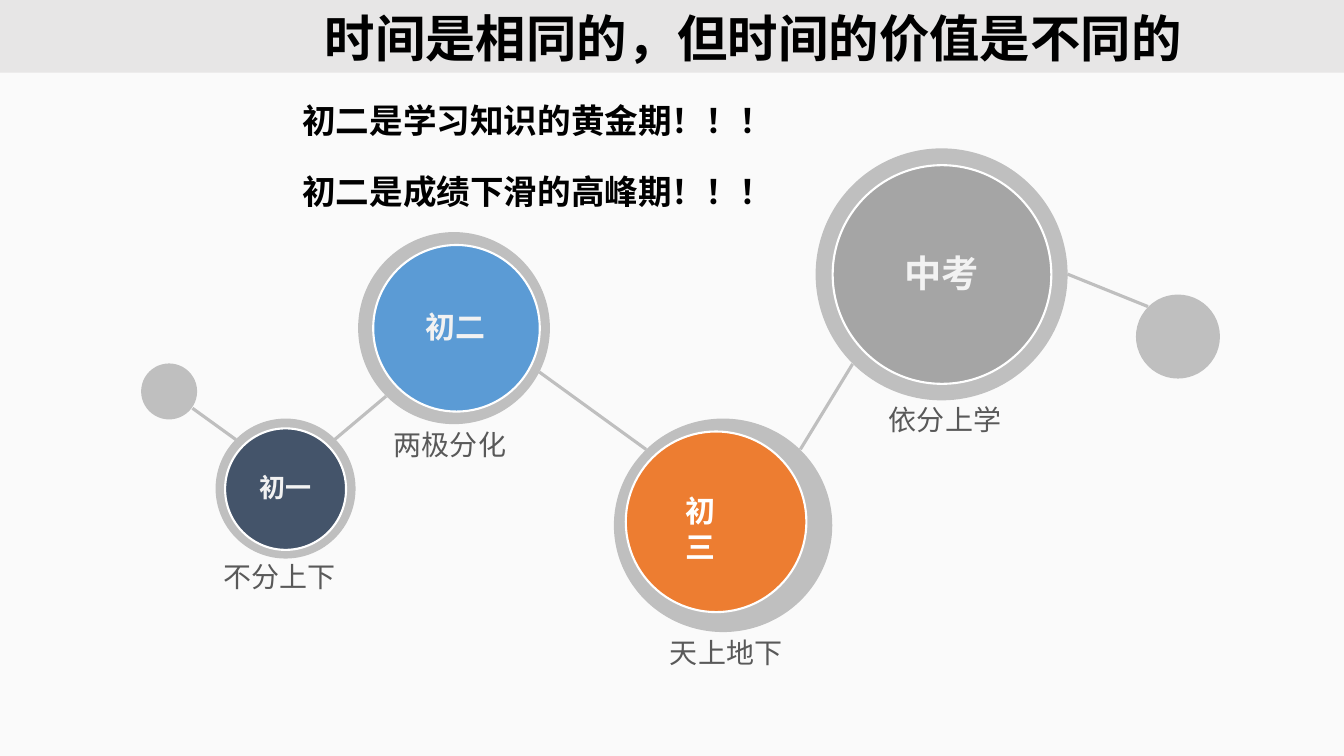
import pptx
import pptx.util
import pptx.dml.color
import pptx.enum.shapes
import pptx.enum.text
import pptx.oxml.ns
from lxml import etree

Pt = pptx.util.Pt
ANCHOR = pptx.enum.text.MSO_ANCHOR
ALIGN = pptx.enum.text.PP_ALIGN

THEME = {
    "background": "E7E6E6", "panel": "FFFFFF", "ring": "BFBFBF", "edge": "FFFFFF",
    "text": "000000", "caption": "595959",
    "title_font": "Calibri", "font": "Noto Sans CJK SC",
    "title_size": 36, "slogan_size": 24, "caption_size": 20,
}

# Content: boxes are (left, top, width, height) in points
SLIDE = (960, 540)
PANEL = (0, 52, 960, 488)
TITLE = ("时间是相同的，但时间的价值是不同的", (124, 10.8, 828, 37.5))
SLOGANS = [
    ("初二是学习知识的黄金期！！！", (206.6, 67, 352, 65)),
    ("初二是成绩下滑的高峰期！！！", (206.6, 118, 352, 65)),
]
STAGES = [
    {"name": "初一", "size": 18.6, "ink": "F2F2F2", "fill": "44546A", "wrap": False,
     "ring": (154, 299, 100, 100), "disc": (160.8, 306, 86.4, 86.8),
     "label": (178, 333.4, 52, 30), "caption": "不分上下", "caption_at": (128, 400.3)},
    {"name": "初二", "size": 21.4, "ink": "F2F2F2", "fill": "5B9BD5", "wrap": False,
     "ring": (255.8, 165.8, 137, 137.2), "disc": (266.6, 175, 119, 119),
     "label": (296.6, 216.7, 57.6, 33), "caption": "两极分化", "caption_at": (249.8, 306)},
    {"name": "初三", "size": 21.4, "ink": "FFFFFF", "fill": "ED7D31", "wrap": True,
     "ring": (438.5, 299, 156, 152.5), "disc": (447, 308.2, 129, 129),
     "label": (473, 348.5, 54.7, 30), "caption": "天上地下", "caption_at": (447, 455)},
    {"name": "中考", "size": 26.6, "ink": "F2F2F2", "fill": "A5A5A5", "wrap": False,
     "ring": (582.6, 106, 180, 180), "disc": (594.8, 118, 156.2, 156.2),
     "label": (638.6, 175, 68.4, 39.6), "caption": "依分上学", "caption_at": (603.4, 288.7)},
]
CAPTION_SIZE = (143.3, 28)
LINKS = [
    (239, 314, 275.8, 283), (385.2, 265.7, 461.5, 321), (571.7, 321, 609, 260),
    (137.5, 291.6, 168.5, 314), (762.5, 195.8, 820, 219),
]
END_DOTS = [(100.8, 259.6, 40, 40), (811.4, 210.4, 60, 60)]


def color(key):
    return pptx.dml.color.RGBColor.from_string(THEME.get(key, key))


def points(values):
    return [Pt(value) for value in values]


def add_filled(slide, kind, box, fill, edge=None):
    part = slide.shapes.add_shape(kind, *points(box))
    part.shadow.inherit = False
    part.fill.solid()
    part.fill.fore_color.rgb = color(fill)
    if edge:
        part.line.color.rgb = color(edge)
        part.line.width = Pt(1.5)
    else:
        part.line.fill.background()
    return part


def write(frame, text, size, ink, font, bold=True, align=ALIGN.CENTER, spacing=None):
    frame.text = text
    paragraph = frame.paragraphs[0]
    paragraph.alignment = align
    if spacing:
        paragraph.line_spacing = spacing
    paragraph.font.size = Pt(size)
    paragraph.font.bold = bold
    paragraph.font.color.rgb = color(ink)
    paragraph.font.name = font
    # East Asian typeface
    latin = paragraph._p.find(".//" + pptx.oxml.ns.qn("a:latin"))
    east_asian = etree.Element(pptx.oxml.ns.qn("a:ea"), typeface=font)
    latin.addnext(east_asian)


def add_text(slide, box, text, size, ink, wrap=True, inset=(7.2, 3.6), **style):
    frame = slide.shapes.add_textbox(*points(box)).text_frame
    frame.word_wrap = wrap
    frame.vertical_anchor = ANCHOR.TOP
    frame.margin_left = frame.margin_right = Pt(inset[0])
    frame.margin_top = frame.margin_bottom = Pt(inset[1])
    write(frame, text, size, ink, THEME["font"], **style)


def main():
    deck = pptx.Presentation()
    deck.slide_width, deck.slide_height = points(SLIDE)
    slide = deck.slides.add_slide(deck.slide_layouts[5])
    slide.background.fill.solid()
    slide.background.fill.fore_color.rgb = color("background")
    oval = pptx.enum.shapes.MSO_SHAPE.OVAL

    # Translucent panel under the title band
    panel = add_filled(slide, pptx.enum.shapes.MSO_SHAPE.RECTANGLE, PANEL, "panel")
    tint = panel._element.spPr.find(".//" + pptx.oxml.ns.qn("a:srgbClr"))
    etree.SubElement(tint, pptx.oxml.ns.qn("a:alpha"), val="83000")

    # Title
    heading, box = TITLE
    title = slide.shapes.title
    title.left, title.top, title.width, title.height = points(box)
    title.text_frame.auto_size = pptx.enum.text.MSO_AUTO_SIZE.NONE
    title.text_frame.vertical_anchor = ANCHOR.MIDDLE
    write(title.text_frame, heading, THEME["title_size"], "text",
          THEME["title_font"], spacing=0.9)

    # Stages: ring, disc, name and caption
    for stage in STAGES:
        add_filled(slide, oval, stage["ring"], "ring")
        add_filled(slide, oval, stage["disc"], stage["fill"], "edge")
        add_text(slide, stage["label"], stage["name"], stage["size"], stage["ink"],
                 wrap=stage["wrap"])
        add_text(slide, stage["caption_at"] + CAPTION_SIZE, stage["caption"],
                 THEME["caption_size"], "caption", inset=(8.6, 4.3),
                 bold=False, spacing=Pt(18.8))

    # Links between stages
    for ends in LINKS:
        link = slide.shapes.add_connector(
            pptx.enum.shapes.MSO_CONNECTOR.STRAIGHT, *points(ends))
        link.line.color.rgb = color("ring")
        link.line.width = Pt(2.25)
        etree.SubElement(link._element.spPr, pptx.oxml.ns.qn("a:effectLst"))

    # Dots at both ends of the chain
    for box in END_DOTS:
        add_filled(slide, oval, box, "ring")

    # Slogans
    for slogan, box in SLOGANS:
        add_text(slide, box, slogan, THEME["slogan_size"], "text",
                 inset=(9.4, 4.3), align=ALIGN.LEFT)

    deck.save("out.pptx")


if __name__ == "__main__":
    main()
